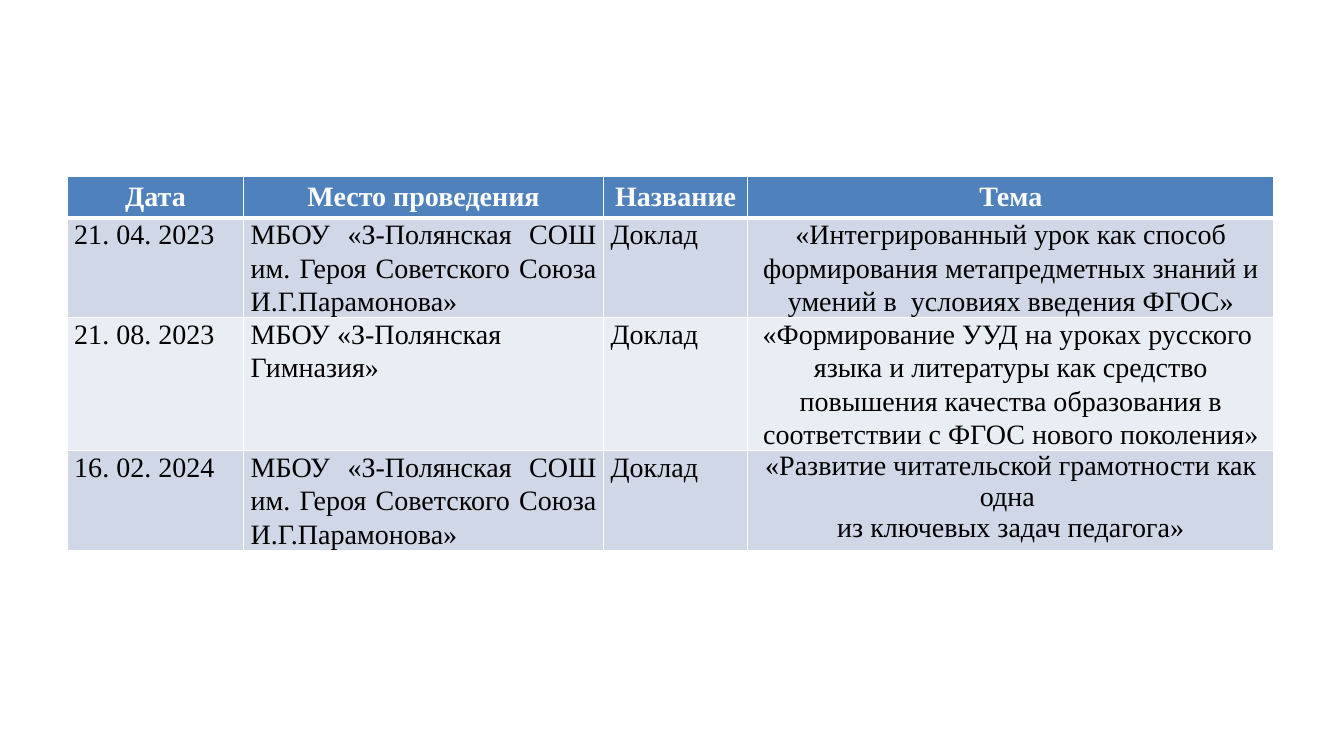
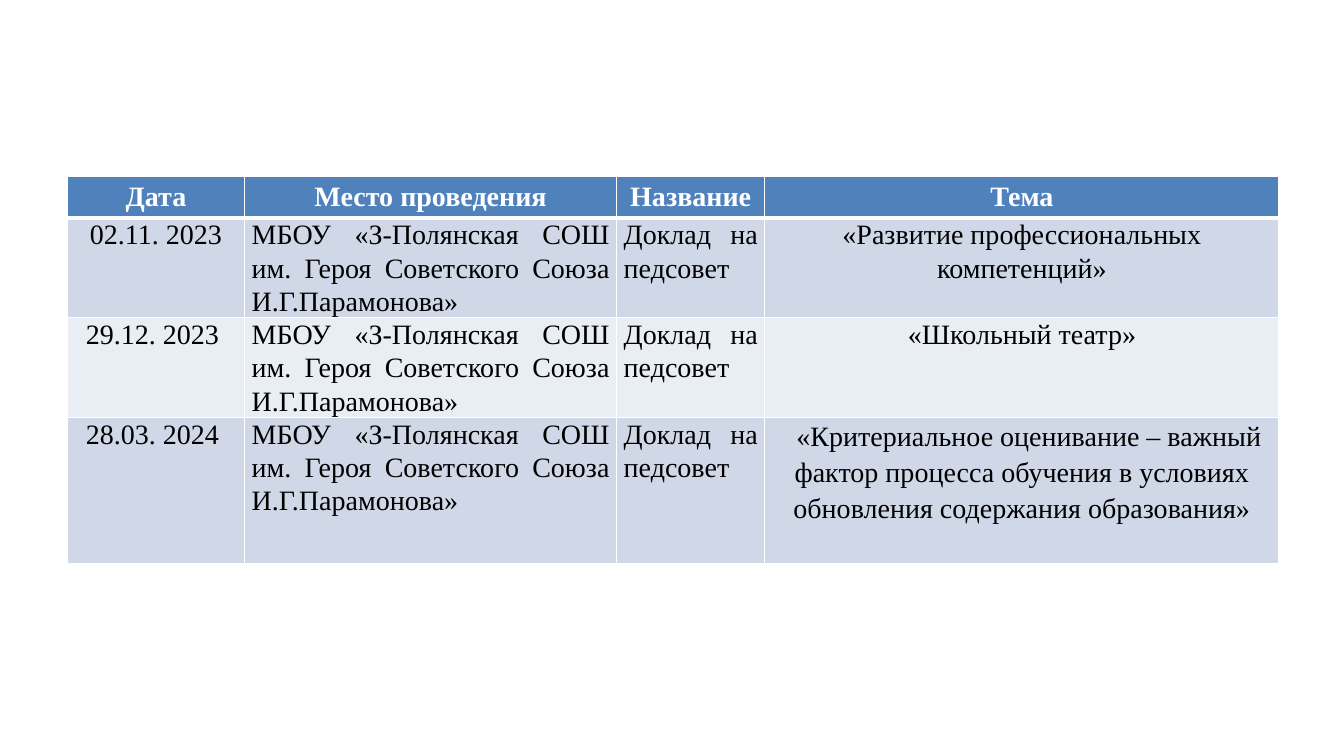
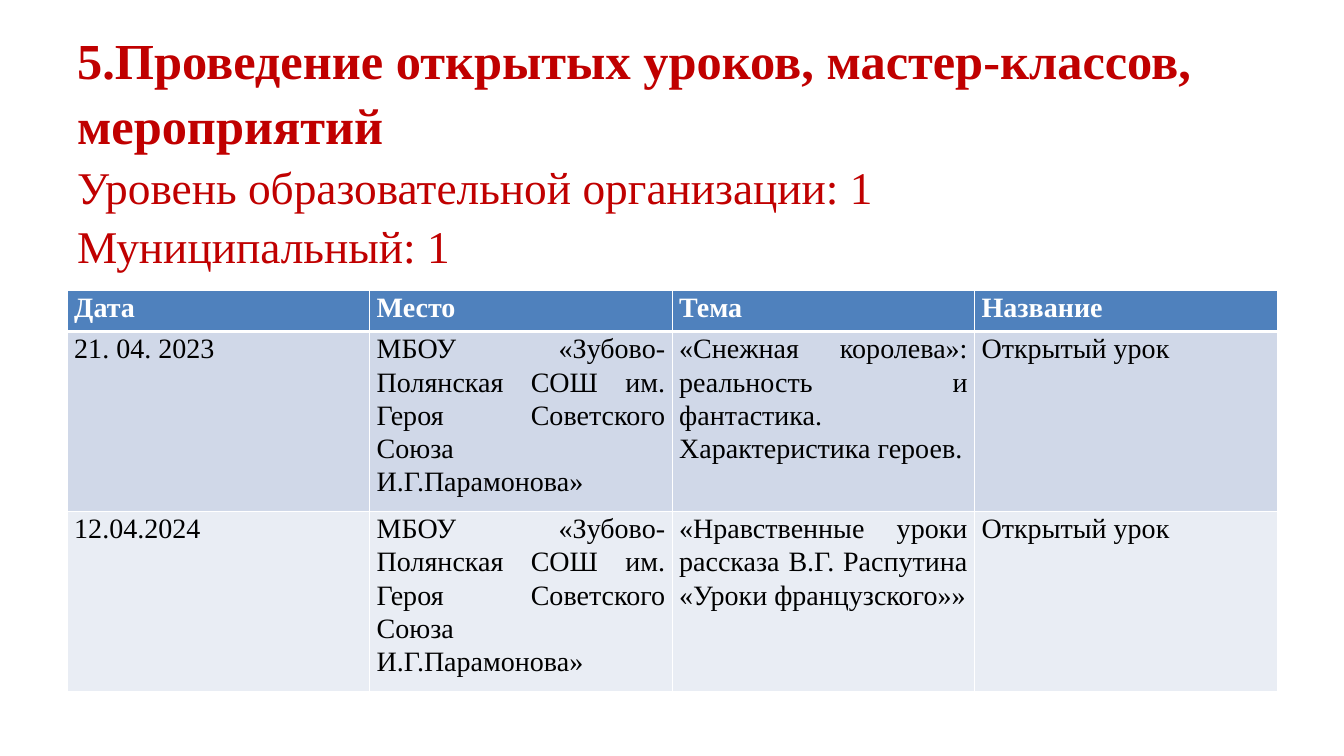
from lxml import etree
from pptx import Presentation, util as u
from pptx.dml.color import RGBColor
from pptx.enum import text
from pptx.oxml.ns import qn

COLORS = {"head": "4F81BD", "odd": "D0D8E8", "even": "E9EDF4",
          "line": "FFFFFF", "head_text": "FFFFFF", "text": "000000", "title": "C00000"}
FONT = "Times New Roman"
ALIGN = {"l": text.PP_ALIGN.LEFT, "c": text.PP_ALIGN.CENTER, "j": text.PP_ALIGN.JUSTIFY}
HEAD_H = 0.41

prs = Presentation()
prs.slide_width, prs.slide_height = u.Inches(13.33), u.Inches(7.5)
LEFT = int(prs.slide_width * 0.05)


def style(p, size, color, bold=False, align="l", spacing=1.0):
    p.alignment, p.line_spacing = ALIGN[align], spacing
    f = p.font
    f.name, f.size, f.bold = FONT, u.Pt(size), bold
    f.color.rgb = RGBColor.from_string(COLORS[color])


def fill_cell(cell, value, fill, color, bold, align, spacing, pad):
    if pad:
        cell.margin_left = cell.margin_right = u.Inches(0.07)
        cell.margin_top = cell.margin_bottom = 0
    # White borders, thicker under the header
    tcPr = cell._tc.get_or_add_tcPr()
    for side in ("lnL", "lnR", "lnT", "lnB"):
        width = 3 if fill == "head" and side == "lnB" else 1
        ln = etree.SubElement(tcPr, qn("a:" + side), w=str(u.Pt(width)))
        solid = etree.SubElement(ln, qn("a:solidFill"))
        etree.SubElement(solid, qn("a:srgbClr"), val=COLORS["line"])
    cell.fill.solid()
    cell.fill.fore_color.rgb = RGBColor.from_string(COLORS[fill])
    cell.text_frame.text = value
    for p in cell.text_frame.paragraphs:
        style(p, 20, color, bold, align, spacing)


# Content: each body row is height, column alignments, last column's spacing, texts
SCHOOL = "МБОУ «З-Полянская СОШ им. Героя Советского Союза И.Г.Парамонова»"
SCHOOL_FULL = SCHOOL.replace("З-", "Зубово-")
COUNCIL = "Доклад на педсовет"
HEADS = ["Дата", "Место проведения", "Название", "Тема"]

tables = [
    {"top": 1.75, "cols": [1.75, 3.57, 1.43, 5.22], "heads": HEADS, "head_align": "c",
     "rows": [
         (0.99, "jjjc", 1.07, ["21. 04. 2023", SCHOOL, "Доклад",
          "«Интегрированный урок как способ формирования метапредметных знаний "
          "и умений в  условиях введения ФГОС»"]),
         (1.32, "lllc", 1.07, ["21. 08. 2023", "МБОУ «З-Полянская Гимназия»", "Доклад",
          "«Формирование УУД на уроках русского  языка и литературы как средство "
          "повышения качества образования в соответствии с ФГОС нового поколения»"]),
         (0.98, "jjjc", 1.0, ["16. 02. 2024", SCHOOL, "Доклад",
          "«Развитие читательской грамотности как одна \nиз ключевых задач педагога»"]),
     ]},
    {"top": 1.75, "cols": [1.76, 3.69, 1.47, 5.1], "heads": HEADS, "head_align": "c",
     "rows": [
         (0.99, "cjjc", 1.07, ["02.11. 2023", SCHOOL, COUNCIL,
          "«Развитие профессиональных компетенций»"]),
         (0.99, "cjjc", 1.07, ["29.12. 2023 ", SCHOOL, COUNCIL, "«Школьный театр»"]),
         (1.45, "cjjc", 1.15, ["28.03. 2024 ", SCHOOL, COUNCIL,
          "«Критериальное оценивание – важный фактор процесса обучения "
          "в условиях обновления содержания образования»"]),
     ]},
    {"top": 2.88, "cols": [3] * 4, "heads": ["Дата", "Место", "Тема", "Название"],
     "head_align": "j",
     "title": [("5.Проведение открытых уроков, мастер-классов, мероприятий", 36, True),
               ("Уровень образовательной организации: 1", 32.4, False),
               ("Муниципальный: 1", 32.4, False)],
     "rows": [
         (1.65, "jjjj", 1.07, ["21. 04. 2023", SCHOOL_FULL,
          "«Снежная королева»: реальность и фантастика. Характеристика героев.",
          "Открытый урок"]),
         (1.65, "jjjj", 1.07, ["12.04.2024", SCHOOL_FULL,
          "«Нравственные уроки рассказа В.Г. Распутина «Уроки французского»»",
          "Открытый урок"]),
     ]},
]

for data in tables:
    s = prs.slides.add_slide(prs.slide_layouts[6])

    # Title
    if "title" in data:
        tf = s.shapes.add_textbox(LEFT, u.Inches(0.19), int(prs.slide_width * 0.9),
                                  u.Inches(2.65)).text_frame
        tf.word_wrap = True
        tf.text = "\n".join(line for line, _, _ in data["title"])
        for p, (_, size, bold) in zip(tf.paragraphs, data["title"]):
            style(p, size, "title", bold, spacing=1.08)

    # Table grid
    heights = [HEAD_H] + [row[0] for row in data["rows"]]
    tbl = s.shapes.add_table(len(heights), len(data["cols"]), LEFT, u.Inches(data["top"]),
                             u.Inches(sum(data["cols"])), u.Inches(sum(heights))).table
    for col, width in zip(tbl.columns, data["cols"]):
        col.width = u.Inches(width)
    for row, height in zip(tbl.rows, heights):
        row.height = u.Inches(height)

    # Header row
    justified = data["head_align"] == "j"
    for c, head in enumerate(data["heads"]):
        fill_cell(tbl.cell(0, c), head, "head", "head_text", True, data["head_align"],
                  1.07 if justified else 1.0, justified)

    # Body rows
    for r, (_, aligns, last_spacing, values) in enumerate(data["rows"], 1):
        for c, (value, align) in enumerate(zip(values, aligns)):
            spacing = last_spacing if c == len(values) - 1 else 1.07
            fill_cell(tbl.cell(r, c), value, "odd" if r % 2 else "even", "text", False,
                      align, spacing, True)

# First-line indent of the last topic on the second slide
topic = prs.slides[1].shapes[0].table.cell(3, 3).text_frame.paragraphs[0]
topic._p.get_or_add_pPr().set("indent", str(u.Pt(10)))

prs.save("out.pptx")
